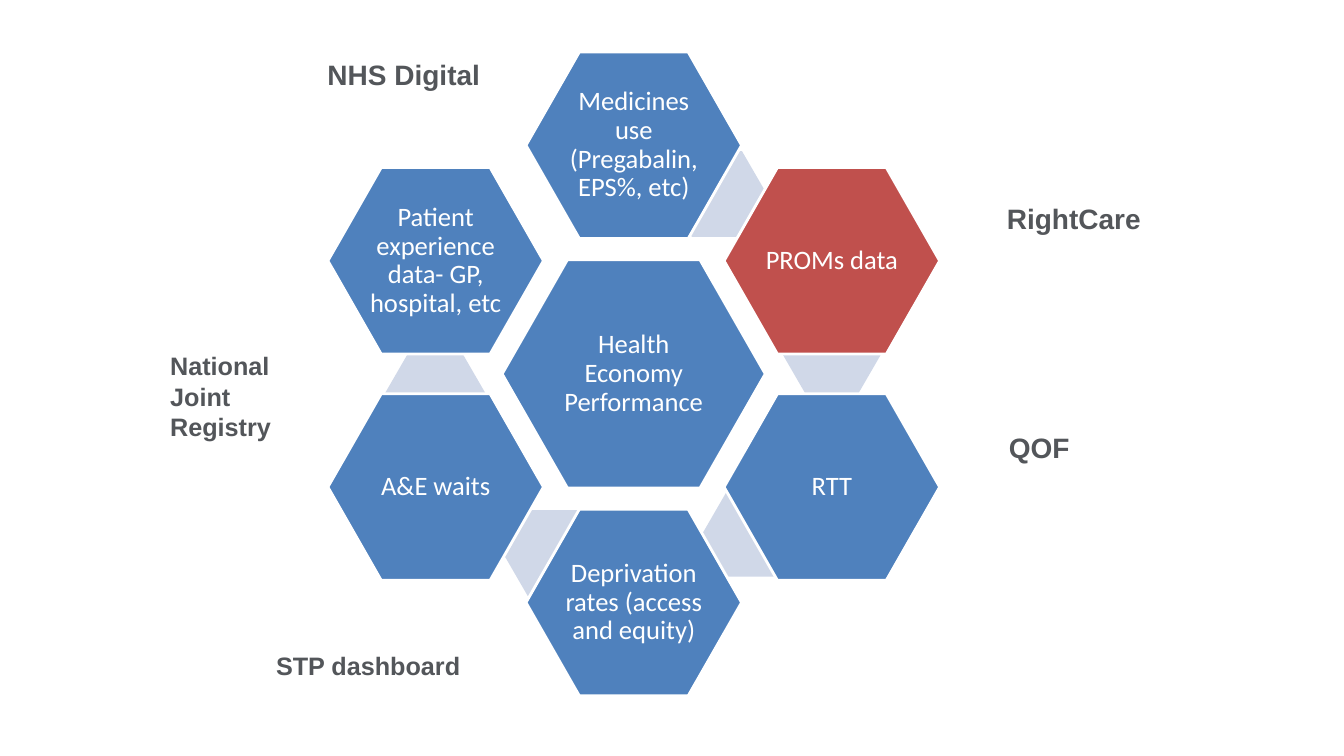
from dataclasses import dataclass

from pptx import Presentation
from pptx.dml.color import RGBColor
from pptx.enum.shapes import MSO_SHAPE
from pptx.enum.text import MSO_ANCHOR, PP_ALIGN
from pptx.util import Pt


@dataclass(frozen=True)
class Theme:
    blue: RGBColor = RGBColor(0x4F, 0x81, 0xBD)
    red: RGBColor = RGBColor(0xC0, 0x50, 0x4D)
    pale: RGBColor = RGBColor(0xD0, 0xD8, 0xE8)
    white: RGBColor = RGBColor(0xFF, 0xFF, 0xFF)
    grey: RGBColor = RGBColor(0x53, 0x56, 0x5A)
    hexagon_font: str = "Calibri"
    label_font: str = "Arial"
    hexagon_size: int = 19
    large_label: int = 20
    small_label: int = 18


THEME = Theme()
CENTRE_X, CENTRE_Y = 452.7, 267.1
COLUMN, NEAR_ROW, FAR_ROW = 141.5, 80.8, 163.3
CORE_SIZE = (188, 163)
OUTER_SIZE = (154, 133.2)
LINK_SIZE = (71.2, 61.3)

MEASURES = [
    ("Medicines use (Pregabalin, EPS%, etc)", (0, -FAR_ROW), THEME.blue, (59.4, -128.6)),
    ("PROMs data", (COLUMN, -NEAR_ROW), THEME.red, (141.5, -14.8)),
    ("RTT", (COLUMN, NEAR_ROW), THEME.blue, (84.6, 114.1)),
    ("Deprivation rates (access and equity)", (0, FAR_ROW), THEME.blue, (-57.8, 128)),
    ("A&E waits", (-COLUMN, NEAR_ROW), THEME.blue, (-141.8, 13.3)),
    ("Patient experience data- GP, hospital, etc", (-COLUMN, -NEAR_ROW), THEME.blue, None),
]

SOURCES = [
    (["RightCare"], (712.1, 140.4, 132.5, 31.5), THEME.large_label),
    (["QOF"], (713.5, 303.8, 132.5, 31.5), THEME.large_label),
    (["STP dashboard"], (190.1, 460.8, 168.5, 29), THEME.small_label),
    (["National", "Joint", "Registry"], (114.5, 247, 132.5, 72.7), THEME.small_label),
    (["NHS Digital"], (226.8, 37.4, 132.5, 31.5), THEME.large_label),
]


def add_run(paragraph, text, font_name, size, color, bold=False):
    run = paragraph.add_run()
    run.text = text
    run.font.name = font_name
    run.font.size = Pt(size)
    run.font.bold = bold
    run.font.color.rgb = color


def add_hexagon(slide, offset, size, fill, adjustment):
    width, height = size
    left = CENTRE_X + offset[0] - width / 2
    top = CENTRE_Y + offset[1] - height / 2
    shape = slide.shapes.add_shape(
        MSO_SHAPE.HEXAGON, Pt(left), Pt(top), Pt(width), Pt(height)
    )
    shape.adjustments[0] = adjustment
    shape.shadow.inherit = False
    shape.fill.solid()
    shape.fill.fore_color.rgb = fill
    shape.line.fill.background()
    return shape


def add_measure(slide, text, offset, size, fill):
    shape = add_hexagon(slide, offset, size, fill, 0.286)
    shape.line.color.rgb = THEME.white
    shape.line.width = Pt(2)
    frame = shape.text_frame
    frame.word_wrap = True
    frame.vertical_anchor = MSO_ANCHOR.MIDDLE
    frame.margin_left = frame.margin_right = Pt(2)
    frame.margin_top = frame.margin_bottom = Pt(2)
    paragraph = frame.paragraphs[0]
    paragraph.alignment = PP_ALIGN.CENTER
    paragraph.line_spacing = 0.9
    add_run(paragraph, text, THEME.hexagon_font, THEME.hexagon_size, THEME.white)


def add_source(slide, lines, box, size):
    frame = slide.shapes.add_textbox(*map(Pt, box)).text_frame
    frame.word_wrap = True
    for index, line in enumerate(lines):
        paragraph = frame.add_paragraph() if index else frame.paragraphs[0]
        add_run(paragraph, line, THEME.label_font, size, THEME.grey, bold=True)


def main():
    presentation = Presentation()
    presentation.slide_width = Pt(960)
    presentation.slide_height = Pt(540)
    slide = presentation.slides.add_slide(presentation.slide_layouts[6])
    add_measure(slide, "Health Economy Performance", (0, 0), CORE_SIZE, THEME.blue)
    for text, offset, fill, link_offset in MEASURES:
        if link_offset:
            add_hexagon(slide, link_offset, LINK_SIZE, THEME.pale, 0.289)
        add_measure(slide, text, offset, OUTER_SIZE, fill)
    for lines, box, size in SOURCES:
        add_source(slide, lines, box, size)
    presentation.save("out.pptx")


if __name__ == "__main__":
    main()
